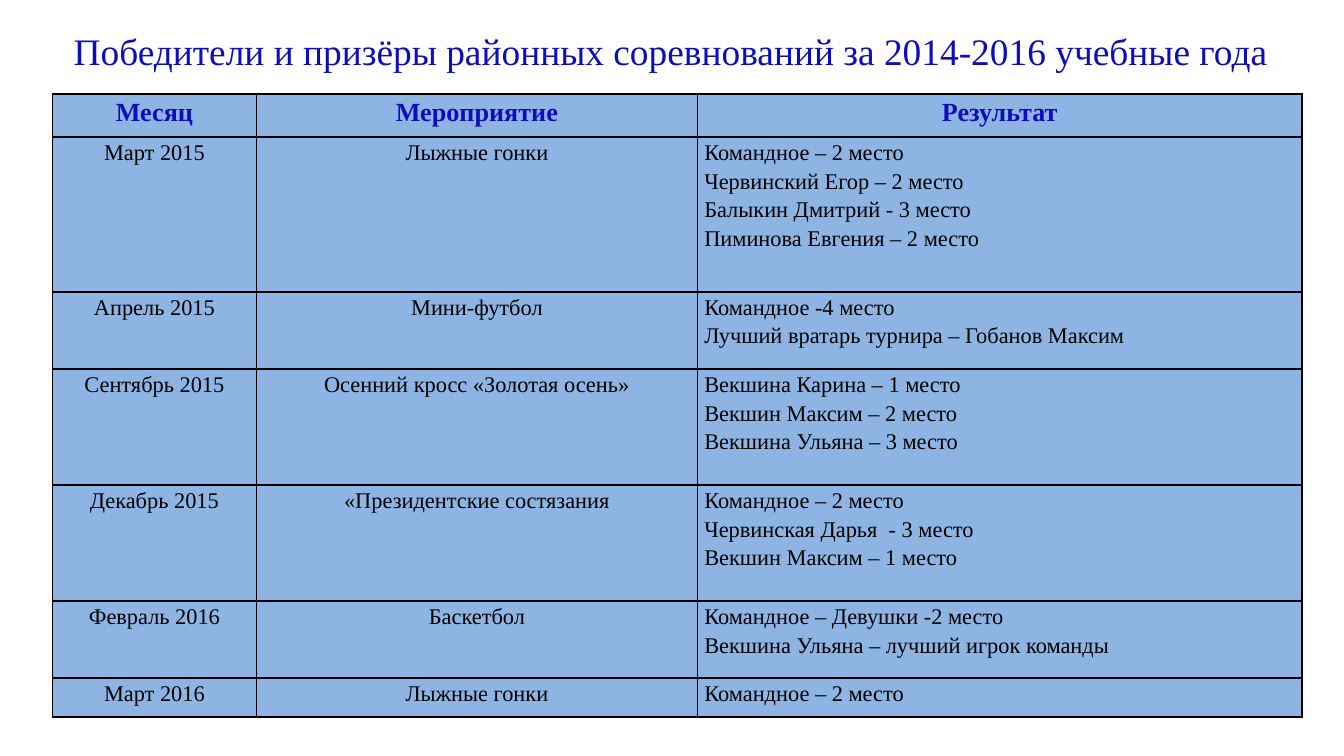
import dataclasses

import lxml.etree
import pptx
import pptx.dml.color
import pptx.enum.text
import pptx.oxml.ns
import pptx.presentation
import pptx.slide
import pptx.table
import pptx.text.text
import pptx.util

Cm = pptx.util.Cm
Pt = pptx.util.Pt
Align = pptx.enum.text.PP_ALIGN

FONT = "Times New Roman"
COLORS = {"head": "0D0DBB", "text": "000000", "cell": "8EB4E3", "line": "000000"}
WIDTHS = (3.86, 8.33, 11.43)
HEAD_H = 0.81
LINE_H = 0.73  # row height per result line


@dataclasses.dataclass(frozen=True)
class Style:
    size: int
    color: str
    bold: bool = False


@dataclasses.dataclass(frozen=True)
class Event:
    month: str
    name: str
    results: tuple[str, ...]


TITLE = Style(20, "head")
HEAD = Style(14, "head", True)
BODY = Style(12, "text")

HEADERS = ("Месяц", "Мероприятие", "Результат")
EVENTS = (
    Event("Март 2015", "Лыжные гонки", (
        "Командное – 2 место",
        "Червинский Егор – 2 место",
        "Балыкин Дмитрий - 3 место",
        "Пиминова Евгения – 2 место",
    )),
    Event("Апрель 2015", "Мини-футбол", (
        "Командное -4 место",
        "Лучший вратарь турнира – Гобанов Максим",
    )),
    Event("Сентябрь 2015", "Осенний кросс «Золотая осень»", (
        "Векшина Карина – 1 место",
        "Векшин Максим – 2 место",
        "Векшина Ульяна – 3 место",
    )),
    Event("Декабрь 2015", "«Президентские состязания", (
        "Командное – 2 место",
        "Червинская Дарья  - 3 место",
        "Векшин Максим – 1 место",
    )),
    Event("Февраль 2016", "Баскетбол", (
        "Командное – Девушки -2 место",
        "Векшина Ульяна – лучший игрок команды",
    )),
    Event("Март 2016", "Лыжные гонки", ("Командное – 2 место",)),
)


def rgb(key: str) -> pptx.dml.color.RGBColor:
    return pptx.dml.color.RGBColor.from_string(COLORS[key])


def add_run(para: pptx.text.text._Paragraph, text: str, style: Style) -> None:
    run = para.add_run()
    run.text = text
    run.font.name = FONT
    run.font.size = Pt(style.size)
    run.font.bold = style.bold
    run.font.color.rgb = rgb(style.color)


def add_border(cell: pptx.table._Cell) -> None:
    """Outline all four sides; the lines must precede the fill."""
    props = cell._tc.get_or_add_tcPr()
    qn = pptx.oxml.ns.qn
    for spot, side in enumerate(("lnL", "lnR", "lnT", "lnB")):
        line = lxml.etree.Element(qn(f"a:{side}"), w=str(Pt(1)))
        fill = lxml.etree.SubElement(line, qn("a:solidFill"))
        lxml.etree.SubElement(fill, qn("a:srgbClr"), val=COLORS["line"])
        props.insert(spot, line)


def fill_cell(cell: pptx.table._Cell, lines: tuple[str, ...],
              style: Style, align: Align) -> None:
    cell.fill.solid()
    cell.fill.fore_color.rgb = rgb("cell")
    add_border(cell)
    cell.margin_left = cell.margin_right = Cm(0.13)
    cell.margin_top = cell.margin_bottom = 0
    frame = cell.text_frame
    for i, text in enumerate(lines):
        para = frame.add_paragraph() if i else frame.paragraphs[0]
        para.alignment = align
        para.line_spacing = 1.15
        add_run(para, text, style)


def add_title(slide: pptx.slide.Slide, text: str) -> None:
    title = slide.shapes.title
    title.left, title.top = Cm(0.58), Cm(0.41)
    title.width, title.height = Cm(24.2), Cm(1.88)
    frame = title.text_frame
    frame.word_wrap = True
    frame.auto_size = pptx.enum.text.MSO_AUTO_SIZE.NONE
    frame.vertical_anchor = pptx.enum.text.MSO_ANCHOR.TOP
    para = frame.paragraphs[0]
    para.alignment = Align.CENTER
    add_run(para, text, TITLE)


def add_results(slide: pptx.slide.Slide) -> None:
    heights = [HEAD_H] + [LINE_H * len(e.results) for e in EVENTS]
    table = slide.shapes.add_table(
        len(heights), len(WIDTHS), Cm(0.99), Cm(1.78),
        Cm(sum(WIDTHS)), Cm(sum(heights))).table
    for col, width in zip(table.columns, WIDTHS):
        col.width = Cm(width)
    for row, height in zip(table.rows, heights):
        row.height = Cm(height)
    for c, text in enumerate(HEADERS):
        fill_cell(table.cell(0, c), (text,), HEAD, Align.CENTER)
    for r, event in enumerate(EVENTS, 1):
        fill_cell(table.cell(r, 0), (event.month,), BODY, Align.CENTER)
        fill_cell(table.cell(r, 1), (event.name,), BODY, Align.CENTER)
        fill_cell(table.cell(r, 2), event.results, BODY, Align.LEFT)


def main() -> None:
    deck = pptx.Presentation()
    deck.slide_width, deck.slide_height = Cm(25.4), Cm(14.28)
    slide = deck.slides.add_slide(deck.slide_layouts[5])
    add_title(slide, "Победители и призёры районных соревнований "
                     "за 2014-2016 учебные года")
    add_results(slide)
    deck.save("out.pptx")


if __name__ == "__main__":
    main()
